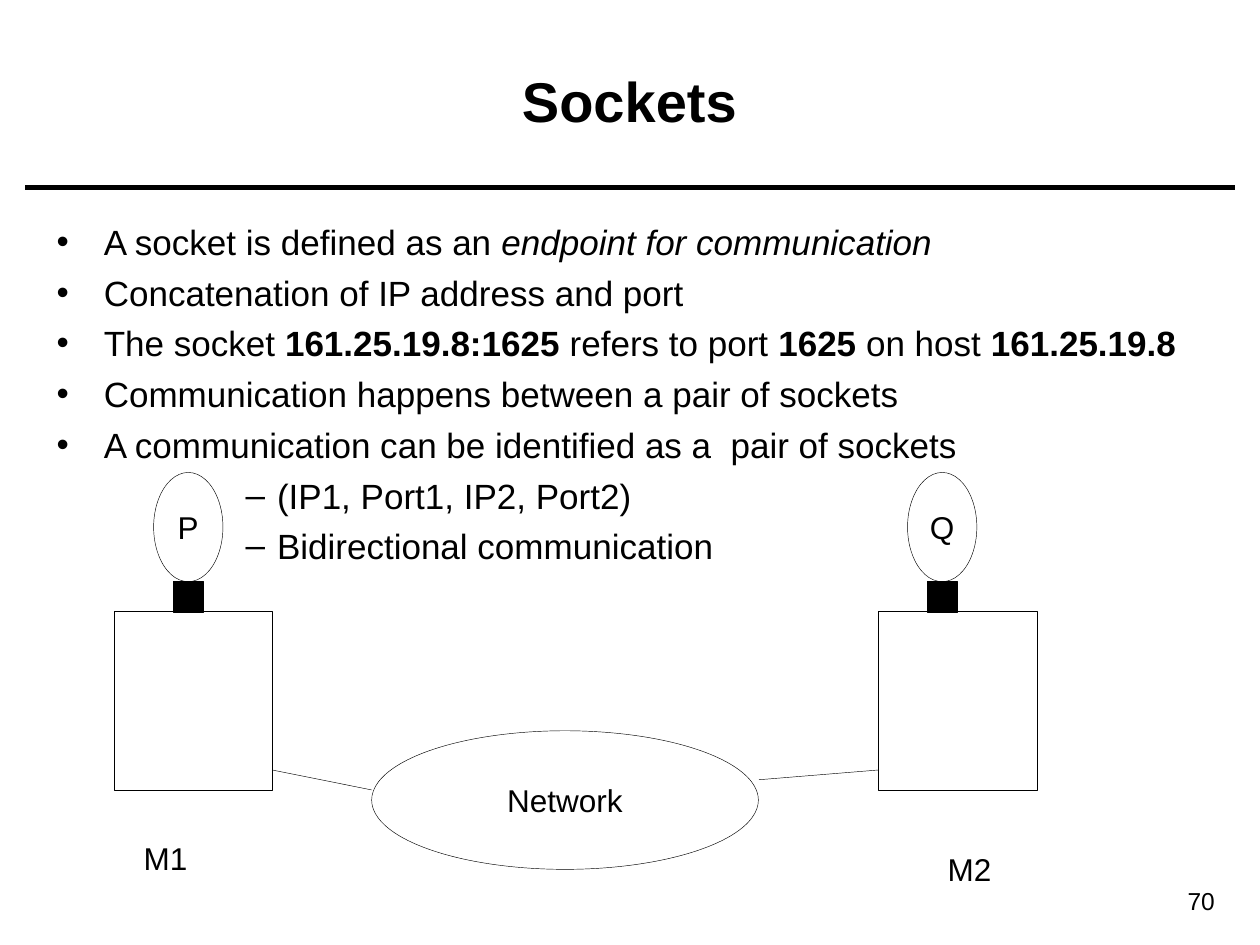
from dataclasses import dataclass
from typing import NamedTuple

from lxml.etree import SubElement
from pptx import Presentation
from pptx.dml.color import RGBColor
from pptx.enum.shapes import MSO_CONNECTOR as Connector, MSO_SHAPE as Preset
from pptx.enum.text import MSO_ANCHOR as Anchor, MSO_AUTO_SIZE as AutoSize, PP_ALIGN as Align
from pptx.oxml.ns import qn
from pptx.util import Pt


@dataclass(frozen=True)
class Theme:
    ink: RGBColor = RGBColor(0, 0, 0)
    font: str = "Arial"
    title: float = 32
    body: float = 20
    label: float = 18
    page: float = 14
    thin: float = 0.25
    rule: float = 3


class Box(NamedTuple):
    left: float
    top: float
    width: float
    height: float


class Run(NamedTuple):
    text: str
    bold: bool = False
    italic: bool = False


class Bullet(NamedTuple):
    runs: list[Run]
    level: int = 0


class BulletStyle(NamedTuple):
    mark: str
    margin: float
    hanging: float


@dataclass(frozen=True)
class Machine:
    process: str
    name: str
    host_left: float
    process_left: float
    label_left: float
    label_top: float


THEME = Theme()
BULLET_STYLES = {0: BulletStyle("•", 27, 27), 3: BulletStyle("–", 126, 18)}
BULLETS = [
    Bullet([Run("A socket is defined as an "), Run("endpoint for communication", italic=True)]),
    Bullet([Run("Concatenation of IP address and port")]),
    Bullet([
        Run("The socket "), Run("161.25.19.8:1625", bold=True),
        Run(" refers to port "), Run("1625", bold=True),
        Run(" on host "), Run("161.25.19.8", bold=True),
    ]),
    Bullet([Run("Communication happens between a pair of sockets")]),
    Bullet([Run("A communication can be identified as a  pair of sockets")]),
    Bullet([Run("(IP1, Port1, IP2, Port2)")], level=3),
    Bullet([Run("Bidirectional communication")], level=3),
]
MACHINES = [
    Machine("P", "M1", 65.2, 87.8, 75, 476),
    Machine("Q", "M2", 502, 518.6, 534.4, 482),
]
LINKS = [((155.6, 440), (212.4, 451.4)), ((433.6, 445.6), (502, 440))]


def lengths(box: Box) -> list[Pt]:
    return [Pt(value) for value in box]


def write_runs(paragraph, runs: list[Run], size: float) -> None:
    for item in runs:
        run = paragraph.add_run()
        run.text = item.text
        font = run.font
        font.name, font.size = THEME.font, Pt(size)
        font.bold, font.italic = item.bold, item.italic
        font.color.rgb = THEME.ink


def write_text(shape, text: str, *, size: float = THEME.label, bold: bool = False,
               align: Align = Align.LEFT, anchor: Anchor = Anchor.TOP, wrap: bool = True) -> None:
    frame = shape.text_frame
    frame.word_wrap, frame.vertical_anchor = wrap, anchor
    paragraph = frame.paragraphs[0]
    paragraph.alignment = align
    write_runs(paragraph, [Run(text, bold=bold)], size)


def add_outline(slide, preset: Preset, box: Box, text: str = "", filled: bool = False) -> None:
    shape = slide.shapes.add_shape(preset, *lengths(box))
    shape.shadow.inherit = False
    if filled:
        shape.fill.solid()
        shape.fill.fore_color.rgb = THEME.ink
    else:
        shape.fill.background()
    shape.line.color.rgb, shape.line.width = THEME.ink, Pt(THEME.thin)
    if text:
        write_text(shape, text, align=Align.CENTER, anchor=Anchor.MIDDLE, wrap=False)


def add_line(slide, start: tuple[float, float], end: tuple[float, float], width: float) -> None:
    ends = [Pt(value) for value in (*start, *end)]
    line = slide.shapes.add_connector(Connector.STRAIGHT, *ends)
    line.line.color.rgb, line.line.width = THEME.ink, Pt(width)
    SubElement(line._element.spPr, qn("a:effectLst"))


def add_bullets(slide, box: Box, bullets: list[Bullet]) -> None:
    frame = slide.shapes.add_textbox(*lengths(box)).text_frame
    frame.word_wrap = True
    for index, bullet in enumerate(bullets):
        paragraph = frame.add_paragraph() if index else frame.paragraphs[0]
        style = BULLET_STYLES[bullet.level]
        paragraph.level, paragraph.space_before = bullet.level, Pt(5)
        properties = paragraph._p.get_or_add_pPr()
        properties.set("marL", str(Pt(style.margin)))
        properties.set("indent", str(-Pt(style.hanging)))
        SubElement(properties, qn("a:buFont"), typeface=THEME.font)
        SubElement(properties, qn("a:buChar"), char=style.mark)
        write_runs(paragraph, bullet.runs, THEME.body)


def add_machine(slide, machine: Machine) -> None:
    host = Box(machine.host_left, 349.2, 90.6, 102.2)
    process = Box(machine.process_left, 270, 39.6, 62.4)
    side = 17.2
    socket_left = process.left + (process.width - side) / 2
    add_outline(slide, Preset.RECTANGLE, host)
    add_outline(slide, Preset.OVAL, process, machine.process)
    add_outline(slide, Preset.RECTANGLE, Box(socket_left, 332.4, side, side), filled=True)
    label = slide.shapes.add_textbox(*lengths(Box(machine.label_left, machine.label_top, 39.6, 28.8)))
    write_text(label, machine.name, wrap=False)
    label.text_frame.auto_size = AutoSize.SHAPE_TO_FIT_TEXT


def main() -> None:
    presentation = Presentation()
    presentation.slide_width, presentation.slide_height = Pt(720), Pt(540)
    slide = presentation.slides.add_slide(presentation.slide_layouts[6])
    add_line(slide, (14.4, 107.3), (705.6, 107.3), THEME.rule)
    page = slide.shapes.add_textbox(*lengths(Box(626.4, 502.6, 74.9, 24.5)))
    write_text(page, "70", size=THEME.page, align=Align.RIGHT)
    title = slide.shapes.add_textbox(*lengths(Box(25.2, 12.2, 669, 90)))
    write_text(title, "Sockets", size=THEME.title, bold=True, align=Align.CENTER, anchor=Anchor.MIDDLE)
    add_bullets(slide, Box(25.2, 122.4, 669, 368.6), BULLETS)
    for machine in MACHINES:
        add_machine(slide, machine)
    add_outline(slide, Preset.OVAL, Box(212.4, 417.6, 221, 79.2), "Network")
    for start, end in LINKS:
        add_line(slide, start, end, THEME.thin)
    presentation.save("out.pptx")


if __name__ == "__main__":
    main()
